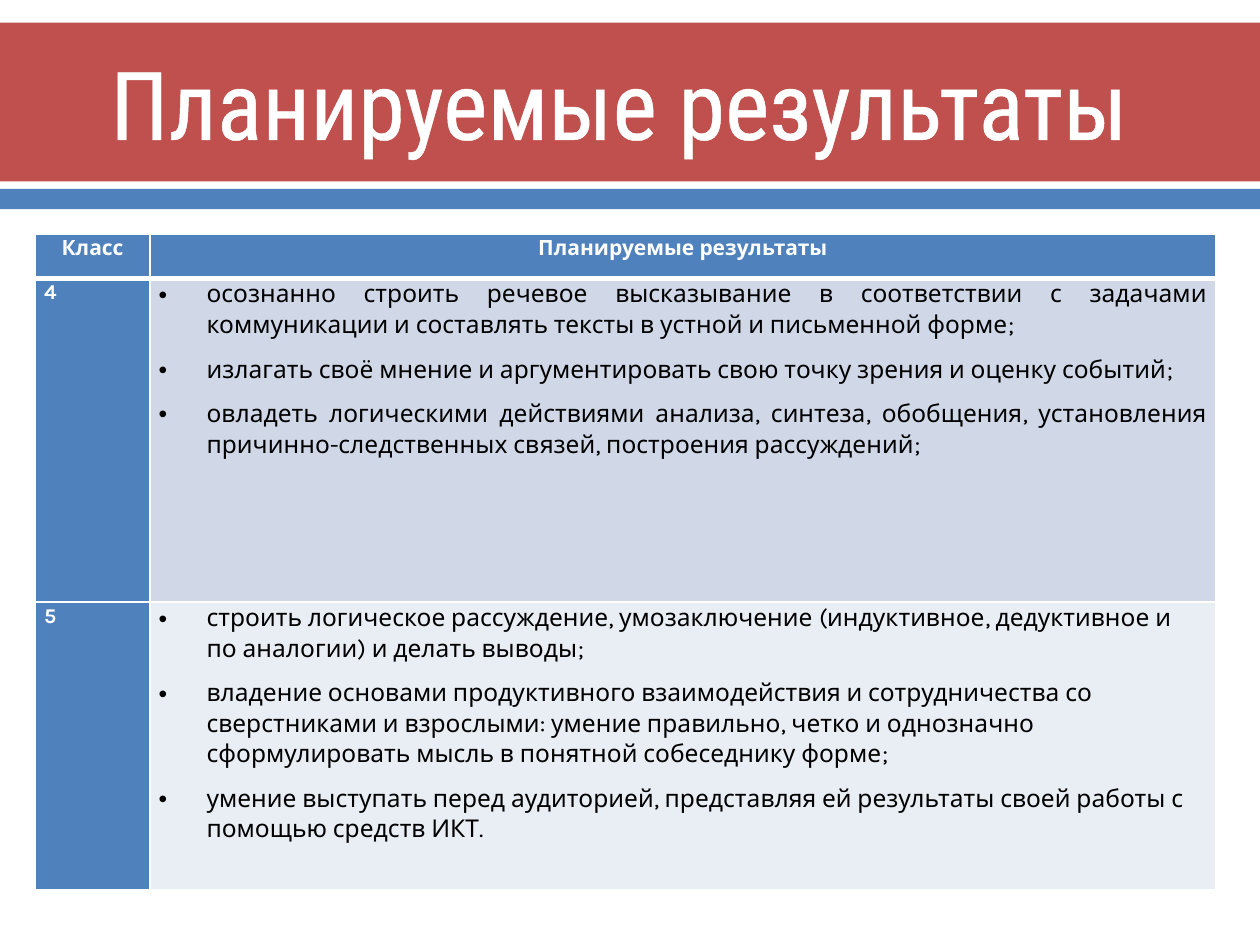
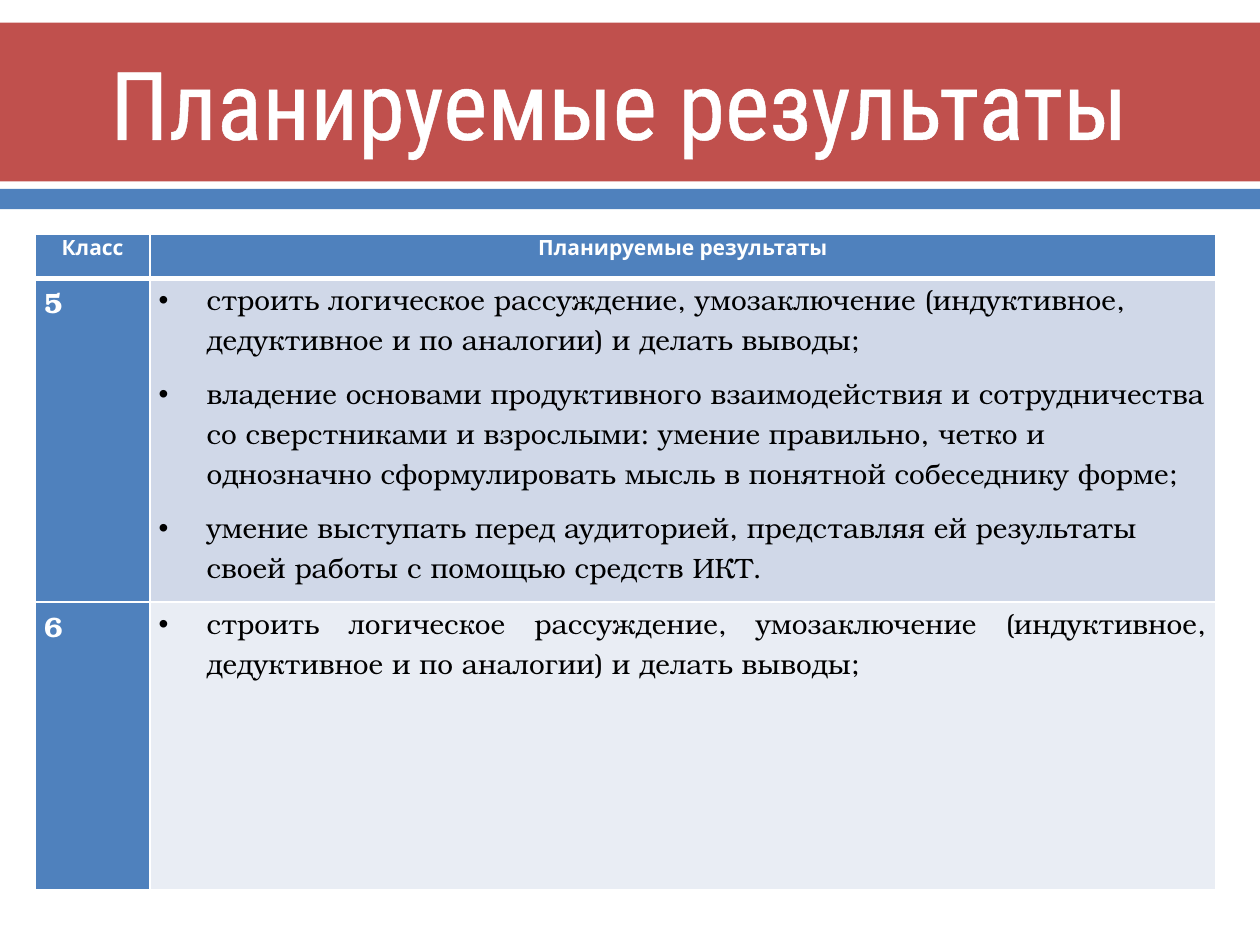
from lxml import etree
from pptx import Presentation, util as u
from pptx.dml.color import RGBColor
from pptx.enum import shapes, text
from pptx.oxml.ns import qn

RED = RGBColor(0xC0, 0x50, 0x4D)
BLUE = RGBColor(0x4F, 0x81, 0xBD)
WHITE = RGBColor(0xFF, 0xFF, 0xFF)
BLACK = RGBColor(0, 0, 0)
TINTS = RGBColor(0xD0, 0xD8, 0xE8), RGBColor(0xE9, 0xED, 0xF4)
HEAD = "Планируемые результаты"
MID, LEFT, JUST = text.PP_ALIGN.CENTER, text.PP_ALIGN.LEFT, text.PP_ALIGN.JUSTIFY

COLS = 0.91, 8.46
ROWS = 0.35, 2.57, 2.28

GOAL = ("строить логическое рассуждение, умозаключение (индуктивное, "
        "дедуктивное и по аналогии) и делать выводы;")
FOUR = [
    "осознанно строить речевое высказывание в соответствии с задачами "
    "коммуникации и составлять тексты в устной и письменной форме; ",
    "излагать своё мнение и аргументировать свою точку зрения и оценку событий;",
    "овладеть логическими действиями анализа, синтеза, обобщения, установления "
    "причинно-следственных связей, построения рассуждений;",
]
FIVE = [
    GOAL,
    "владение основами продуктивного взаимодействия и сотрудничества со "
    "сверстниками и взрослыми: умение правильно, четко и однозначно "
    "сформулировать мысль в понятной собеседнику форме;",
    "умение выступать перед аудиторией, представляя ей результаты своей работы "
    "с помощью средств ИКТ.",
]
# Per slide: font, number size, goal size, then (grade, goals, alignment) rows
PAGES = [
    ("Karla", 12, 14, [("4", FOUR, JUST), ("5", FIVE, LEFT)]),
    ("TeX Gyre Bonum", 16, 16, [("5", FIVE, LEFT), ("6", [GOAL + " "], JUST)]),
]


def outline(host, tag, width, spot):
    """Put a solid white line into a properties element."""
    line = etree.Element(qn(tag), w=str(u.Pt(width)))
    fill = etree.SubElement(line, qn("a:solidFill"))
    etree.SubElement(fill, qn("a:srgbClr"), val=str(WHITE))
    host.insert(spot, line)


def write(cell, lines, font, size, color, bold, align, after=0, bullet=False):
    """Fill a table cell with one paragraph per line."""
    cell.margin_left = cell.margin_right = u.Inches(0.07)
    cell.margin_top = cell.margin_bottom = 0
    for i, line in enumerate(lines):
        frame = cell.text_frame
        para = frame.add_paragraph() if i else frame.paragraphs[0]
        para.alignment, para.line_spacing = align, 1.07
        para.space_after = u.Pt(after)
        if bullet:
            props = para._p.get_or_add_pPr()
            props.set("marL", str(u.Inches(0.38)))
            props.set("indent", str(-u.Inches(0.38)))
            etree.SubElement(props, qn("a:buFont"), typeface="Arial")
            etree.SubElement(props, qn("a:buChar"), char="•")
        run = para.add_run()
        run.text = line
        run.font.name, run.font.size = font, u.Pt(size)
        run.font.bold, run.font.color.rgb = bold, color


deck = Presentation()
deck.slide_width, deck.slide_height = u.Inches(10), u.Inches(7.5)
plan = deck.slide_layouts[5]
slides = [deck.slides.add_slide(plan) for page in PAGES]

# Shared bands live on the layout, behind everything else
for i, (top, high, color) in enumerate([(0.18, 1.26, RED), (1.5, 0.16, BLUE)]):
    band = slides[0].shapes.add_shape(
        shapes.MSO_SHAPE.RECTANGLE, 0, u.Inches(top), deck.slide_width, u.Inches(high))
    band.shadow.inherit = False
    band.fill.solid()
    band.fill.fore_color.rgb = color
    band.line.fill.background()
    plan.shapes._spTree.insert(2 + i, band._element)

for slide, (font, small, large, grades) in zip(slides, PAGES):
    # Title
    title = slide.shapes.title
    title.left, title.top = u.Inches(0.5), u.Inches(0.2)
    title.width, title.height = u.Inches(9), u.Inches(1.22)
    frame = title.text_frame
    frame.word_wrap, frame.auto_size = True, text.MSO_AUTO_SIZE.NONE
    frame.vertical_anchor = text.MSO_ANCHOR.MIDDLE
    frame.paragraphs[0].alignment = MID
    run = frame.paragraphs[0].add_run()
    run.text = HEAD + " "
    run.font.name, run.font.size = "Roboto Condensed", u.Pt(54)
    run.font.color.rgb = WHITE
    outline(run._r.get_or_add_rPr(), "a:ln", 1.1, 0)

    # Table grid
    table = slide.shapes.add_table(
        len(ROWS), len(COLS), u.Inches(0.28), u.Inches(1.86),
        u.Inches(sum(COLS)), u.Inches(sum(ROWS))).table
    for col, wide in zip(table.columns, COLS):
        col.width = u.Inches(wide)
    for row, high in zip(table.rows, ROWS):
        row.height = u.Inches(high)

    # Table text
    for c, label in enumerate(["Класс", HEAD]):
        write(table.cell(0, c), [label], "Karla", 12, WHITE, True, MID)
    for r, (grade, goals, align) in enumerate(grades, 1):
        write(table.cell(r, 0), [grade], font, small, WHITE, True, LEFT, 8)
        write(table.cell(r, 1), goals, font, large, BLACK, False, align, 8, True)

    # Cell fills and borders, with a thick rule under the header
    for r in range(len(ROWS)):
        for c in range(len(COLS)):
            cell = table.cell(r, c)
            cell.fill.solid()
            cell.fill.fore_color.rgb = TINTS[r - 1] if r and c else BLUE
            widths = {"L": 1, "R": 1, "T": 3 if r == 1 else 1, "B": 1 if r else 3}
            for i, (side, width) in enumerate(widths.items()):
                outline(cell._tc.get_or_add_tcPr(), "a:ln" + side, width, i)

deck.save("out.pptx")
